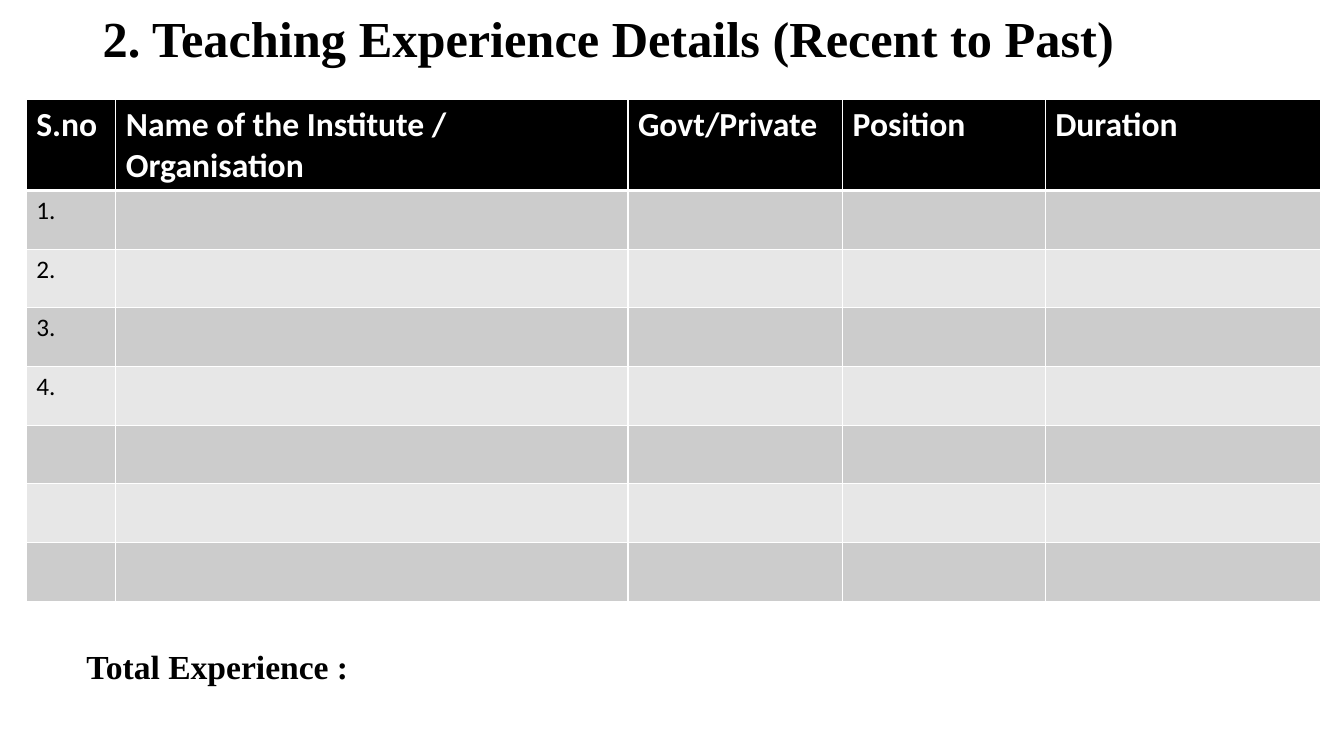
"""Build the teaching experience slide with its table of institutes."""
from lxml import etree
from pptx import Presentation
from pptx.dml.color import RGBColor
from pptx.enum.text import MSO_ANCHOR
from pptx.oxml.ns import qn
from pptx.util import Pt

MIDDLE, TOP = MSO_ANCHOR.MIDDLE, MSO_ANCHOR.TOP
BLACK = RGBColor(0x00, 0x00, 0x00)
WHITE = RGBColor(0xFF, 0xFF, 0xFF)
DARK_BAND = RGBColor(0xCC, 0xCC, 0xCC)
LIGHT_BAND = RGBColor(0xE7, 0xE7, 0xE7)
SERIF, SANS = "Times New Roman", "Calibri"

TITLE = "2. Teaching Experience Details (Recent to Past)"
HEADERS = ["S.no", "Name of the Institute / Organisation", "Govt/Private", "Position", "Duration"]
ROW_LABELS = ["1.", "2.", "3.", "4.", "", "", ""]
TOTAL = "Total Experience :"

SLIDE_SIZE = (960, 540)
TITLE_BOX = (66.24, -12.24, 828, 83.52)
TOTAL_BOX = (54.72, 457.92, 794.16, 36)
TABLE_LEFT, TABLE_TOP = 18.72, 71.28
COLUMN_WIDTHS = [64.08, 365.76, 153.36, 144.72, 196.8]
HEADER_HEIGHT, ROW_HEIGHT = 56.16, 41.9
THIN, THICK = 1, 3


def write_text(frame, text, size=18, font=SANS, color=BLACK, bold=False, spacing=None):
    """Put one formatted line of text into a text frame."""
    para = frame.paragraphs[0]
    para.line_spacing = spacing
    span = para.add_run()
    span.text = text
    span.font.size = Pt(size)
    span.font.name = font
    span.font.color.rgb = color
    span.font.bold = bold


def add_box(page, bounds, text, anchor=TOP, **text_format):
    """Add a wrapped text box holding one line of text."""
    box = page.shapes.add_textbox(*[Pt(length) for length in bounds])
    box.text_frame.word_wrap = True
    box.text_frame.vertical_anchor = anchor
    write_text(box.text_frame, text, **text_format)


def style_cell(cell, fill, top, bottom):
    """Give a cell white borders and a solid fill."""
    properties = cell._tc.get_or_add_tcPr()
    for side, width in (("L", THIN), ("R", THIN), ("T", top), ("B", bottom)):
        line = etree.SubElement(properties, qn(f"a:ln{side}"), w=str(Pt(width)))
        paint = etree.SubElement(line, qn("a:solidFill"))
        etree.SubElement(paint, qn("a:srgbClr"), val=str(WHITE))
    cell.fill.solid()
    cell.fill.fore_color.rgb = fill


def add_experience_table(page):
    """Add the table with a black header and banded rows."""
    rows = [HEADERS] + [[label] + [""] * (len(HEADERS) - 1) for label in ROW_LABELS]
    heights = [HEADER_HEIGHT] + [ROW_HEIGHT] * len(ROW_LABELS)
    frame = page.shapes.add_table(
        len(rows), len(HEADERS), Pt(TABLE_LEFT), Pt(TABLE_TOP),
        Pt(sum(COLUMN_WIDTHS)), Pt(sum(heights)))
    table = frame.table
    for column, width in zip(table.columns, COLUMN_WIDTHS):
        column.width = Pt(width)
    for index, (texts, height) in enumerate(zip(rows, heights)):
        table.rows[index].height = Pt(height)
        is_header = index == 0
        band = DARK_BAND if index % 2 else LIGHT_BAND
        for cell, text in zip(table.rows[index].cells, texts):
            style_cell(cell, BLACK if is_header else band,
                       top=THICK if index == 1 else THIN,
                       bottom=THICK if is_header else THIN)
            if text:
                write_text(cell.text_frame, text, size=24 if is_header else 18,
                           color=WHITE if is_header else BLACK, bold=is_header)


def main():
    """Assemble and save the deck."""
    deck = Presentation()
    deck.slide_width, deck.slide_height = [Pt(length) for length in SLIDE_SIZE]
    page = deck.slides.add_slide(deck.slide_layouts[6])
    add_box(page, TITLE_BOX, TITLE, anchor=MIDDLE, size=36, font=SERIF, bold=True, spacing=0.9)
    add_experience_table(page)
    add_box(page, TOTAL_BOX, TOTAL, size=24, font=SERIF, bold=True)
    deck.save("out.pptx")


if __name__ == "__main__":
    main()
